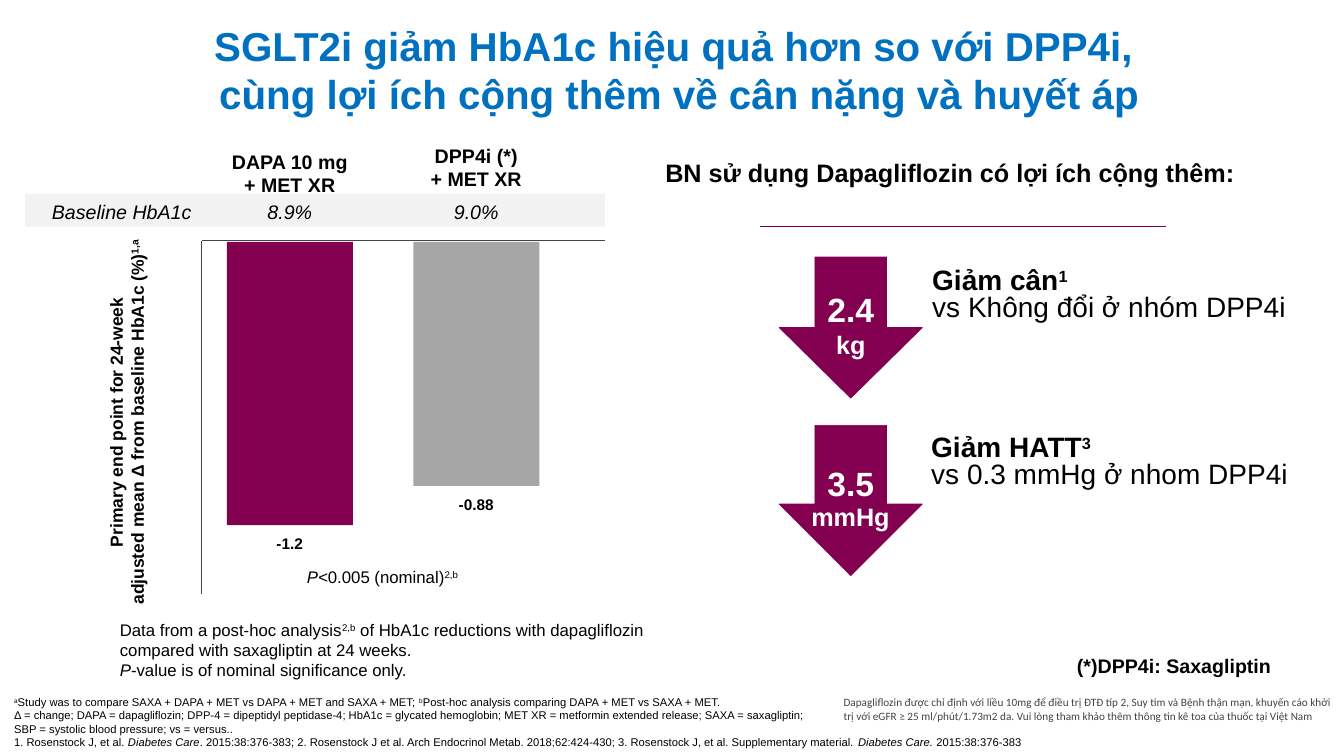
import copy

import pptx
import pptx.util
from pptx.dml.color import RGBColor
from pptx.enum.shapes import MSO_CONNECTOR, MSO_SHAPE
from pptx.enum.text import MSO_ANCHOR, MSO_AUTO_SIZE, PP_ALIGN
from pptx.oxml.ns import qn

BLUE = RGBColor(0x00, 0x70, 0xC0)
PLUM = RGBColor(0x83, 0x00, 0x51)
GREY = RGBColor(0xA6, 0xA6, 0xA6)
PALE = RGBColor(0xF2, 0xF2, 0xF2)
SLATE = RGBColor(0x3F, 0x44, 0x44)
BLACK = RGBColor(0, 0, 0)
WHITE = RGBColor(0xFF, 0xFF, 0xFF)

LEFT, CENTER, RIGHT = PP_ALIGN.LEFT, PP_ALIGN.CENTER, PP_ALIGN.RIGHT
AXIS_X, AXIS_Y = 20, 23.9
BAR_W = 12.5


def grid(*cells):
    """Turn columns and rows of a tenth of an inch into lengths."""
    return [pptx.util.Inches(cell / 10) for cell in cells]


def sup(text):
    return text, {"sup": True}


def italic(text):
    return text, {"italic": True}


def add_run(p, text, size, color=BLACK, font="Arial", bold=False,
            italic=False, sup=False):
    """Add text to a paragraph, with a line break at each newline."""
    for i, line in enumerate(text.split("\n")):
        if i:
            p.add_line_break()
            p._p[-1].append(copy.deepcopy(r._r.rPr))
        r = p.add_run()
        r.text = line
        r.font.name, r.font.size = font, pptx.util.Pt(size)
        r.font.bold, r.font.italic = bold, italic
        r.font.color.rgb = color
        if sup:
            r._r.get_or_add_rPr().set("baseline", "30000")


def write(tf, *paragraphs, align=LEFT, spacing=1.0, **fmt):
    """Fill a frame; a paragraph is a string or a list of runs."""
    for i, runs in enumerate(paragraphs):
        p = tf.add_paragraph() if i else tf.paragraphs[0]
        p.alignment, p.line_spacing = align, spacing
        for run in [runs] if isinstance(runs, str) else runs:
            text, extra = (run, {}) if isinstance(run, str) else run
            add_run(p, text, **{**fmt, **extra})


def set_insets(tf, side, top, bottom):
    tf.margin_left, tf.margin_right, tf.margin_top, tf.margin_bottom = grid(
        side, side, top, bottom)


def add_text(s, at, *paragraphs, wrap=False, anchor=MSO_ANCHOR.TOP, grow=True,
             **fmt):
    tb = s.shapes.add_textbox(*grid(*at))
    tf = tb.text_frame
    tf.word_wrap, tf.vertical_anchor = wrap, anchor
    tf.auto_size = MSO_AUTO_SIZE.SHAPE_TO_FIT_TEXT if grow else MSO_AUTO_SIZE.NONE
    write(tf, *paragraphs, **fmt)
    return tb


def add_block(s, kind, at, fill):
    sp = s.shapes.add_shape(kind, *grid(*at))
    sp.shadow.inherit = False
    sp.fill.solid()
    sp.fill.fore_color.rgb = fill
    sp.line.fill.background()
    return sp


def add_line(s, ends, color, width):
    line = s.shapes.add_connector(MSO_CONNECTOR.STRAIGHT, *grid(*ends))
    line.line.color.rgb, line.line.width = color, pptx.util.Pt(width)
    line._element.spPr.append(
        line._element.makeelement(qn("a:effectLst"), {}))


def add_title(s):
    title = s.shapes.title
    title.left, title.top, title.width, title.height = grid(3.5, 2.1, 127.8, 7.3)
    tf = title.text_frame
    tf.vertical_anchor, tf.auto_size = MSO_ANCHOR.TOP, MSO_AUTO_SIZE.NONE
    tf.word_wrap = True
    set_insets(tf, 0, 0, 0)
    write(tf, "SGLT2i giảm HbA1c hiệu quả hơn so với DPP4i, \n"
          "cùng lợi ích cộng thêm về cân nặng và huyết áp",
          align=CENTER, size=28.8, color=BLUE, bold=True)


def add_bar(s, left, height, color, value, head, head_top, baseline):
    """One treatment arm: heading, baseline level, bar and its value."""
    mid = left + BAR_W / 2
    add_block(s, MSO_SHAPE.RECTANGLE, (left, 24, BAR_W, height), color)
    add_text(s, (mid - 6.8, head_top, 13.6, 5.7), head, "+ MET XR",
             anchor=MSO_ANCHOR.BOTTOM, align=CENTER, size=14, bold=True)
    add_text(s, (mid - 3.25, 19.3, 6.5, 3.4), baseline,
             align=CENTER, size=14, italic=True)
    add_text(s, (mid - 2.75, 24.4 + height, 5.5, 2.9), value,
             align=CENTER, size=11, bold=True)


def add_benefit(s, top, height, label_at, name, ref, versus, figures, inset):
    """A down arrow with its figures, and the gain it stands for."""
    add_text(s, label_at, [name, sup(ref)], [(versus, {"bold": False})],
             size=20, bold=True, spacing=0.8)
    arrow = add_block(s, MSO_SHAPE.DOWN_ARROW, (77.3, top, 14.2, height), PLUM)
    arrow.line.color.rgb, arrow.line.width = PLUM, pptx.util.Pt(0.5)
    tf = arrow.text_frame
    tf.vertical_anchor, tf.word_wrap = MSO_ANCHOR.MIDDLE, True
    set_insets(tf, 1, inset, 0.5)
    write(tf, *figures, align=CENTER, size=24, color=WHITE, bold=True)


def add_results(s):
    add_block(s, MSO_SHAPE.RECTANGLE, (2.5, 19.2, 57.5, 3.3), PALE)
    add_text(s, (2.7, 19.3, 17.3, 3.4), "Baseline HbA1c", wrap=True,
             align=RIGHT, size=14, italic=True)
    add_bar(s, 22.5, 28.1, PLUM, "-1.2", "DAPA 10 mg", 14.3, "8.9%")
    add_bar(s, 41, 24.2, GREY, "-0.88", "DPP4i (*)", 13.7, "9.0%")
    for end in ((AXIS_X, 58.9), (60, AXIS_Y)):
        add_line(s, (AXIS_X, AXIS_Y, *end), SLATE, 0.75)
    axis_title = add_text(
        s, (-7.7, 39.2, 40.2, 5.4),
        ["Primary end point for 24-week\n"
         "adjusted mean Δ from baseline HbA1c (%)", sup("1,a")],
        anchor=MSO_ANCHOR.BOTTOM, align=CENTER, size=12.5, bold=True)
    axis_title.rotation = 270
    add_text(s, (29.3, 55.7, 17.3, 3),
             [italic("P<"), "0.005 (nominal)", sup("2,b")],
             align=CENTER, size=12)
    add_text(s, (10.9, 61, 58.2, 7.1),
             ["Data from a post-hoc analysis", sup("2,b"),
              " of HbA1c reductions with dapagliflozin compared with "
              "saxagliptin at 24 weeks.\n", italic("P"),
              "-value is of nominal significance only."],
             wrap=True, size=12)


def add_benefits(s):
    add_text(s, (64.7, 15.1, 59.1, 4),
             "BN sử dụng Dapagliflozin có lợi ích cộng thêm:",
             align=CENTER, size=18, bold=True)
    add_line(s, (75.4, 22.5, 115.7, 22.5), PLUM, 1)
    add_benefit(s, 25.5, 14, (91.5, 26.2, 37.4, 6.4), "Giảm cân", "1",
                "vs Không đổi ở nhóm DPP4i",
                ["2.4", [("kg", {"size": 18})]], inset=3.4)
    add_benefit(s, 42.2, 14.9, (91.4, 42.8, 37.7, 6.4), "Giảm HATT", "3",
                "vs 0.3 mmHg ở nhom DPP4i", ["3.5"], inset=0.5)
    add_text(s, (79.5, 49.2, 9.9, 4), "mmHg", size=18, color=WHITE, bold=True)


def add_notes_below(s):
    tb = add_text(
        s, (0.1, 69.8, 120.5, 5.2),
        [sup("a"), "Study was to compare SAXA + DAPA + MET vs DAPA + MET and "
         "SAXA + MET; ", sup("b"),
         "Post-hoc analysis comparing DAPA + MET vs SAXA + MET."],
        "Δ = change; DAPA = dapagliflozin; DPP-4 = dipeptidyl peptidase-4; "
        "HbA1c = glycated hemoglobin; MET XR = metformin extended release; "
        "SAXA = saxagliptin;",
        "SBP = systolic blood pressure; vs = versus..",
        ["1. Rosenstock J, et al. ", italic("Diabetes Care"),
         ". 2015:38:376-383; 2. Rosenstock J et al. Arch Endocrinol Metab. "
         "2018;62:424-430; 3. Rosenstock J, et al. Supplementary material. ",
         italic("Diabetes Care."), " 2015:38:376-383"],
        wrap=True, anchor=MSO_ANCHOR.BOTTOM, grow=False, size=8)
    set_insets(tb.text_frame, 1.3, 0.7, 0.7)
    add_text(s, (99.2, 64.4, 27.9, 3.4), "(*)DPP4i: Saxagliptin", wrap=True,
             align=RIGHT, size=14, bold=True)
    add_text(s, (82.7, 68.5, 50.5, 3.7),
             "Dapagliflozin được chỉ định với liều 10mg để điều trị ĐTĐ típ 2, "
             "Suy tim và Bệnh thận mạn, khuyến cáo khởi trị với eGFR ≥ 25 "
             "ml/phút/1.73m2 da. Vui lòng tham khảo thêm thông tin kê toa của "
             "thuốc tại Việt Nam",
             wrap=True, size=8, font="Calibri", color=SLATE)


def main():
    prs = pptx.Presentation()
    prs.slide_width, prs.slide_height = grid(133.33, 75)
    s = prs.slides.add_slide(prs.slide_layouts[5])
    add_title(s)
    add_results(s)
    add_benefits(s)
    add_notes_below(s)
    prs.save("out.pptx")


if __name__ == "__main__":
    main()
